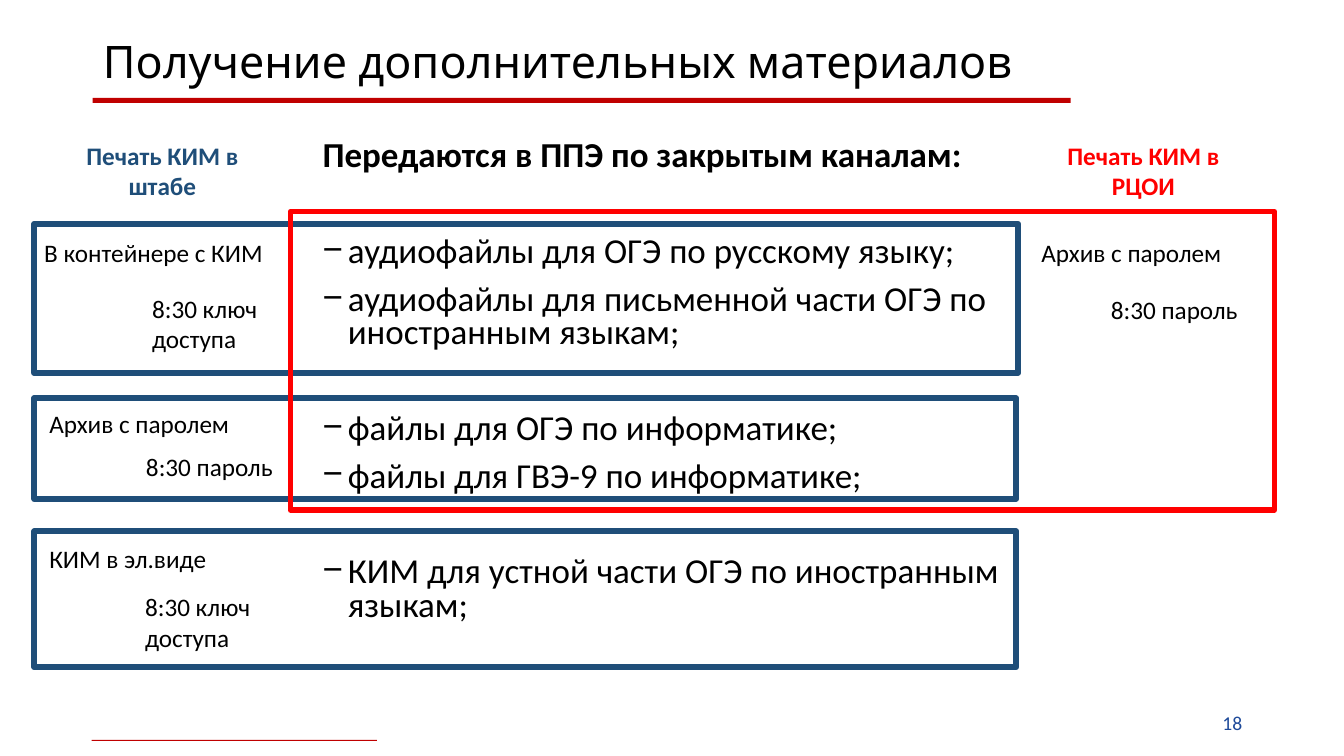
from lxml import etree
from pptx import Presentation
from pptx.dml.color import RGBColor
from pptx.enum.shapes import MSO_SHAPE
from pptx.enum.text import MSO_ANCHOR, MSO_AUTO_SIZE, PP_ALIGN
from pptx.oxml.ns import qn
from pptx.util import Inches, Pt

RECT = MSO_SHAPE.RECTANGLE
LEFT, MID, RIGHT = PP_ALIGN.LEFT, PP_ALIGN.CENTER, PP_ALIGN.RIGHT
CELL = Inches(0.1)
NAVY, RED, WINE, BLACK, BLUE = "1F4E79", "FF0000", "C00000", "000000", "1D4999"

deck = Presentation()
deck.slide_width = Inches(13.33)
deck.slide_height = Inches(7.5)
slide = deck.slides.add_slide(deck.slide_layouts[1])
shapes = slide.shapes
title, body = slide.placeholders


def hue(code):
    return RGBColor.from_string(code)


def style(par, size, color=BLACK, bold=False, align=LEFT, face="Calibri"):
    par.alignment = align
    font = par.font
    font.name, font.size, font.bold = face, Pt(size), bold
    font.color.rgb = hue(color)


for holder, spot in (
    (title, (9.2, 2.4, 115, 7.9)),
    (body, (31, 13.5, 71.7, 50.5)),
):
    holder.left, holder.top, holder.width, holder.height = [round(n * CELL) for n in spot]
    holder.text_frame.auto_size = MSO_AUTO_SIZE.NONE
    holder.text_frame.word_wrap = True

title.text_frame.text = "Получение дополнительных материалов"
title.text_frame.vertical_anchor = MSO_ANCHOR.MIDDLE
head = title.text_frame.paragraphs[0]
head.line_spacing = 0.9
style(head, 32, face="League Spartan")

points = [
    ("Передаются в ППЭ по закрытым каналам:", 0),
    ("аудиофайлы для ОГЭ по русскому языку;", 44.4),
    ("аудиофайлы для письменной части ОГЭ по иностранным языкам;", 10),
    ("файлы для ОГЭ по информатике;", 44.4),
    ("файлы для ГВЭ-9 по информатике;", 10),
    ("КИМ для устной части ОГЭ по иностранным языкам;", 44.4),
]
body.text_frame.text = "\n".join(text for text, gap in points)
for row, (par, (text, gap)) in enumerate(zip(body.text_frame.paragraphs, points)):
    props = par._p.get_or_add_pPr()
    dent = Inches(0.25) if row else 0
    props.set("marL", str(dent))
    props.set("indent", str(-dent))
    if row:
        etree.SubElement(props, qn("a:buChar")).set("char", "−")
    else:
        etree.SubElement(props, qn("a:buNone"))
    par.line_spacing = 0.8
    par.space_before = Pt(gap)
    style(par, 25, bold=row == 0)

for spot, fill, line in (
    ((9.2, 9.7, 97, 0.5), WINE, None),
    ((9.1, 73.4, 28.3, 0.1), WINE, None),
    ((3.4, 22.2, 97.6, 14.8), None, NAVY),
    ((3.4, 39.5, 97.4, 10), None, NAVY),
    ((3.4, 52.7, 97.4, 13.5), None, NAVY),
    ((28.8, 21, 97.6, 29.6), None, RED),
):
    box = shapes.add_shape(RECT, *[round(n * CELL) for n in spot])
    box.shadow.inherit = False
    if fill:
        box.fill.solid()
        box.fill.fore_color.rgb = hue(fill)
        box.line.fill.background()
    else:
        box.fill.background()
        box.line.color.rgb = hue(line)
        box.line.width = Pt(4)

for text, spot, size, color, bold, align in (
    ("Печать КИМ в штабе", (5.2, 13.4, 21.8, 7.1), 18, NAVY, True, MID),
    ("Печать КИМ в РЦОИ", (102.5, 13.4, 21.8, 7.1), 18, RED, True, MID),
    ("В контейнере с КИМ", (3.4, 23.1, 25.5, 4), 18, BLACK, False, LEFT),
    ("8:30 ключ доступа", (14.1, 28.6, 13.5, 7.1), 18, BLACK, False, LEFT),
    ("Архив с паролем", (3.9, 40, 25.5, 4), 18, BLACK, False, LEFT),
    ("8:30 пароль", (13.5, 44.3, 16, 4), 18, BLACK, False, LEFT),
    ("КИМ в эл.виде", (3.9, 53.4, 25.5, 4), 18, BLACK, False, LEFT),
    ("8:30 ключ доступа", (13.4, 58.2, 13.5, 7.1), 18, BLACK, False, LEFT),
    ("Архив с паролем", (102.3, 23.1, 25.5, 4), 18, BLACK, False, LEFT),
    ("8:30 пароль", (109.2, 28.7, 16, 4), 18, BLACK, False, LEFT),
    ("18", (94.2, 70, 30, 4), 14, BLUE, False, RIGHT),
):
    note = shapes.add_textbox(*[round(n * CELL) for n in spot]).text_frame
    note.word_wrap = True
    note.text = text
    style(note.paragraphs[0], size, color, bold, align)

deck.save("out.pptx")
